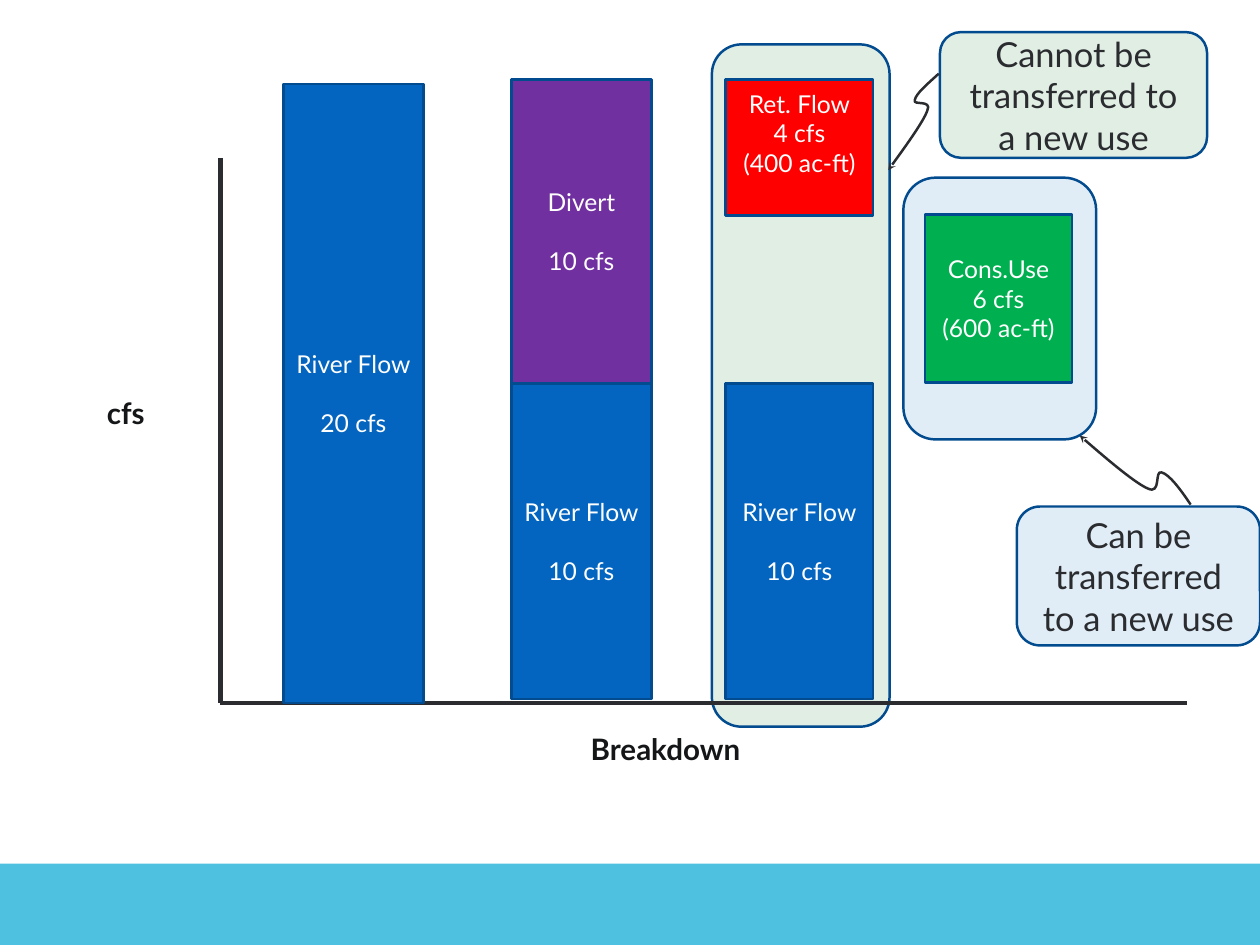
from pptx import Presentation
from pptx.dml.color import RGBColor
from pptx.enum.shapes import MSO_CONNECTOR, MSO_SHAPE
from pptx.enum.text import MSO_ANCHOR, PP_ALIGN
from pptx.oxml.ns import qn
from pptx.oxml.xmlchemy import OxmlElement
from pptx.util import Inches, Pt

BAND = RGBColor(0x4D, 0xC1, 0xDF)
OUTLINE = RGBColor(0x02, 0x4B, 0x8E)
INK = RGBColor(0x2A, 0x2C, 0x2F)
LABEL = RGBColor(0x15, 0x16, 0x18)
WHITE = RGBColor(0xFF, 0xFF, 0xFF)
RIVER = RGBColor(0x03, 0x65, 0xC0)
DIVERT = RGBColor(0x70, 0x30, 0xA0)
RETURN = RGBColor(0xFF, 0x00, 0x00)
CONSUMED = RGBColor(0x00, 0xB0, 0x50)
FIXED_TINT = RGBColor(0x00, 0x7B, 0x26)
MOVABLE_TINT = RGBColor(0x00, 0x70, 0xC0)

deck = Presentation()
deck.slide_width, deck.slide_height = Inches(14.22), Inches(10.67)
page = deck.slides.add_slide(deck.slide_layouts[6])


def place(*percents):
    """Turn alternating x and y percentages of the slide into lengths."""
    sizes = (deck.slide_width, deck.slide_height)
    return [round(sizes[i % 2] * share / 100) for i, share in enumerate(percents)]


def write(box, lines, gap, align, **font_values):
    """Fill a box with Lato lines, parted by a gap in points."""
    frame = box.text_frame
    frame.word_wrap = True
    frame.margin_left = frame.margin_right = Inches(0.14)
    frame.margin_top = frame.margin_bottom = Inches(0.07)
    for i, line in enumerate(lines):
        para = frame.paragraphs[0] if i == 0 else frame.add_paragraph()
        para.alignment = align
        if i:
            para.space_before = Pt(gap)
        span = para.add_run()
        span.text = line
        color = font_values["color"]
        span.font.color.rgb = color
        for name, value in font_values.items():
            if name != "color":
                setattr(span.font, name, value)
        span.font.name = "Lato"


# Band along the foot of the slide
band = page.shapes.add_shape(MSO_SHAPE.RECTANGLE, *place(0, 91.4, 100, 8.6))
band.shadow.inherit = False
band.fill.solid()
band.fill.fore_color.rgb = BAND
band.line.fill.background()

# Tinted zones, axes, axis labels, bars and callouts, from back to front
zones = [
    ((71.7, 18.8, 15.3, 27.7), MOVABLE_TINT, None),
    ((56.5, 4.7, 14.1, 72.2), FIXED_TINT, None),
]
callouts = [
    ((74.6, 3.4, 21.2, 13.3), FIXED_TINT, "Cannot be transferred to a new use"),
    ((80.7, 53.6, 19.3, 14.7), MOVABLE_TINT, "Can be transferred to a new use"),
]
for layer in (zones, callouts):
    for area, tint, words in layer:
        panel = page.shapes.add_shape(MSO_SHAPE.ROUNDED_RECTANGLE, *place(*area))
        panel.shadow.inherit = False
        panel.fill.solid()
        panel.fill.fore_color.rgb = tint
        alpha = OxmlElement("a:alpha")
        alpha.set("val", "12000")
        panel.fill._xPr.find(".//" + qn("a:srgbClr")).append(alpha)
        panel.line.color.rgb = OUTLINE
        panel.line.width = Pt(2)
        if words:
            panel.text_frame.vertical_anchor = MSO_ANCHOR.MIDDLE
            write(panel, [words], 0, PP_ALIGN.CENTER, size=Pt(28), color=INK)
    if layer is callouts:
        break

    # Axes meet at the lower left
    for end in ((17.5, 16.7), (94.2, 74.4)):
        axis = page.shapes.add_connector(
            MSO_CONNECTOR.STRAIGHT, *place(*end, 17.5, 74.4))
        axis.line.color.rgb = INK
        axis.line.width = Pt(3.5)
        axis._element.spPr.append(OxmlElement("a:effectLst"))

    # Axis labels
    for area, words in (((7.5, 41.1, 7.5, 5.2), "cfs"),
                        ((45.9, 76.7, 25, 5.2), "Breakdown")):
        box = page.shapes.add_textbox(*place(*area))
        write(box, [words], 0, PP_ALIGN.LEFT, size=Pt(24), bold=True, color=LABEL)

    # Flow bars: area, fill, lines, gap between lines, lift of the text
    for area, fill, lines, gap, lift in (
        ((57.6, 40.6, 11.7, 33.4), RIVER, ["River Flow", "10 cfs"], 24, 0),
        ((73.4, 22.7, 11.7, 17.8), CONSUMED,
         ["Cons.Use", "6 cfs", "(600 ac-ft)"], 0, 0),
        ((57.6, 8.4, 11.7, 14.4), RETURN,
         ["Ret. Flow", "4 cfs", "(400 ac-ft)"], 0, 24),
        ((22.5, 8.9, 11.1, 65.5), RIVER, ["River Flow", "20 cfs"], 24, 0),
        ((40.6, 40.6, 11.1, 33.4), RIVER, ["River Flow", "10 cfs"], 24, 0),
        ((40.6, 8.4, 11.1, 32.2), DIVERT, ["Divert", "10 cfs"], 24, 0),
    ):
        bar = page.shapes.add_shape(MSO_SHAPE.RECTANGLE, *place(*area))
        bar.shadow.inherit = False
        bar.fill.solid()
        bar.fill.fore_color.rgb = fill
        bar.line.color.rgb = OUTLINE
        bar.line.width = Pt(2)
        bar.text_frame.vertical_anchor = MSO_ANCHOR.MIDDLE
        write(bar, lines, gap, PP_ALIGN.CENTER, size=Pt(20), color=WHITE)
        bar.text_frame.margin_bottom += Pt(lift)

# Curved arrows from callouts to zones: a start, then three points per curve
for points in (
    [(74.5, 7.8), (73.6, 8.9), (72.7, 9.9), (72.6, 10.6), (72.4, 11.2),
     (74, 10.5), (73.6, 11.7), (73.3, 12.9), (70.5, 18), (70.5, 18)],
    [(94.5, 53.4), (93.7, 51.8), (92.8, 50.2), (92.2, 50), (91.6, 49.7),
     (92.2, 52.4), (91.1, 51.7), (90, 51.1), (85.7, 46.1), (85.7, 46.1)],
):
    start, *steps = [place(*point) for point in points]
    builder = page.shapes.build_freeform(*start)
    builder.add_line_segments(steps, close=False)
    arrow = builder.convert_to_shape()
    arrow.shadow.inherit = False
    arrow.fill.background()
    arrow.line.color.rgb = INK
    arrow.line.width = Pt(2)
    properties = arrow._element.spPr
    segments = list(properties.iter(qn("a:lnTo")))
    for i in range(0, len(segments), 3):
        curve = OxmlElement("a:cubicBezTo")
        segments[i].addprevious(curve)
        for segment in segments[i:i + 3]:
            curve.append(segment[0])
            segment.getparent().remove(segment)
    head = OxmlElement("a:tailEnd")
    head.set("type", "stealth")
    properties.find(qn("a:ln")).append(head)

deck.save("out.pptx")
